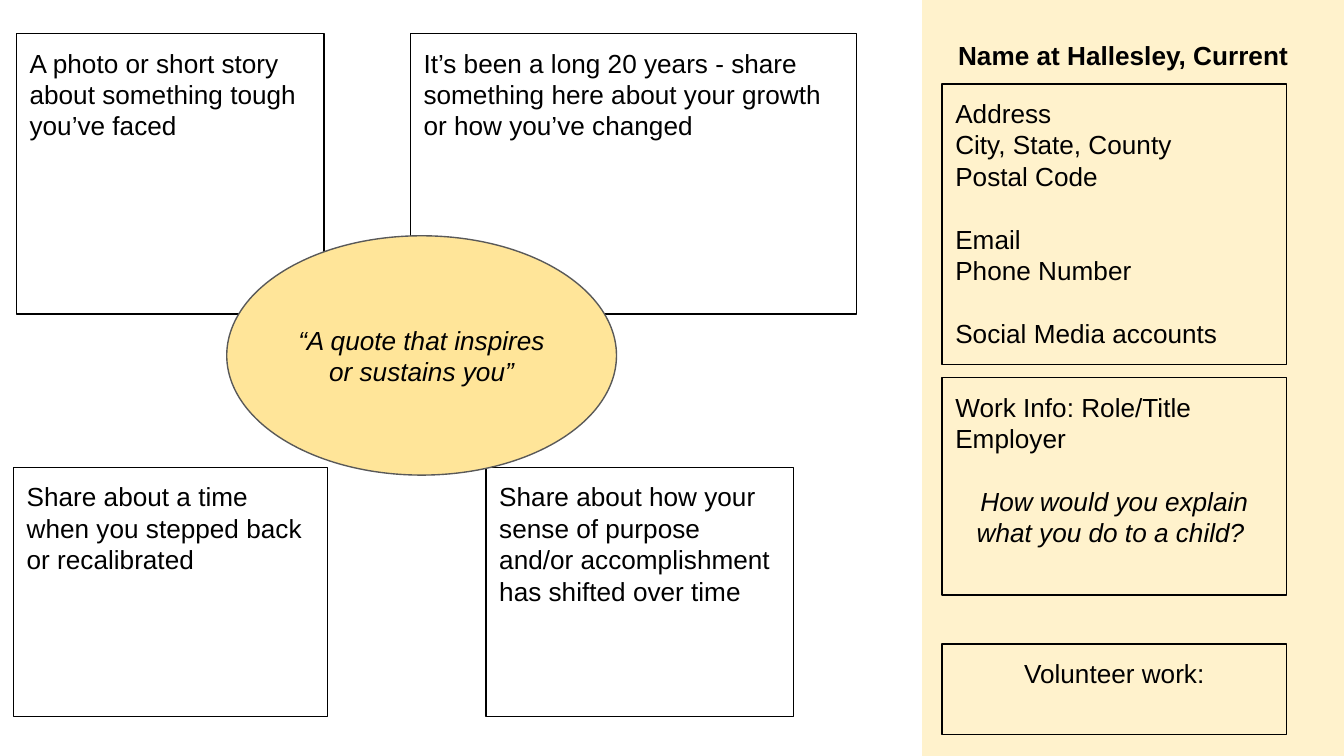
from pptx import Presentation
from pptx.dml.color import RGBColor
from pptx.enum.shapes import MSO_SHAPE
from pptx.enum.text import MSO_ANCHOR, PP_ALIGN
from pptx.util import Pt

RECTANGLE, OVAL = MSO_SHAPE.RECTANGLE, MSO_SHAPE.OVAL
TOP, MIDDLE = MSO_ANCHOR.TOP, MSO_ANCHOR.MIDDLE
LEFT, CENTER = PP_ALIGN.LEFT, PP_ALIGN.CENTER

COLORS = {
    "ink": "000000",
    "sidebar": "FFF2CC",
    "quote": "FFE599",
    "quote_edge": "595959",
}


class ProfileSlide:
    font = "Arial"
    size = 14
    line_width = 0.75
    inset = 7.2
    blank_line = 16.8

    def __init__(self, slide):
        self.slide = slide

    def color(self, name):
        return RGBColor.from_string(COLORS[name])

    def shape(self, kind, box, fill=None, line=None):
        shape = self.slide.shapes.add_shape(kind, *map(Pt, box))
        shape.shadow.inherit = False
        if fill:
            shape.fill.solid()
            shape.fill.fore_color.rgb = self.color(fill)
        else:
            shape.fill.background()
        if line:
            shape.line.color.rgb = self.color(line)
            shape.line.width = Pt(self.line_width)
        else:
            shape.line.fill.background()
        return shape

    def set_text(self, shape, text, align=LEFT, anchor=TOP, bold=False, italic=False):
        frame = shape.text_frame
        frame.word_wrap = True
        frame.vertical_anchor = anchor
        frame.margin_left = frame.margin_right = Pt(self.inset)
        frame.margin_top = frame.margin_bottom = Pt(self.inset)
        frame.text = text
        for paragraph in frame.paragraphs:
            paragraph.alignment = align
            for run in paragraph.runs:
                run.font.name = self.font
                run.font.size = Pt(self.size)
                run.font.bold = bold
                run.font.italic = italic
                run.font.color.rgb = self.color("ink")
        return frame.paragraphs

    def heading(self, box, text):
        self.set_text(self.slide.shapes.add_textbox(*map(Pt, box)), text, bold=True)

    def card(self, box, text, align=LEFT, gaps=()):
        """Outlined box; gaps lists the paragraphs set one line lower."""
        paragraphs = self.set_text(self.shape(RECTANGLE, box, line="ink"), text, align)
        for index in gaps:
            paragraphs[index].space_before = Pt(self.blank_line)
        return paragraphs

    def quote(self, box, text):
        oval = self.shape(OVAL, box, fill="quote", line="quote_edge")
        self.set_text(oval, text, CENTER, MIDDLE, italic=True)


def main():
    deck = Presentation()
    deck.slide_width, deck.slide_height = Pt(720), Pt(405)
    page = ProfileSlide(deck.slides.add_slide(deck.slide_layouts[6]))

    page.shape(RECTANGLE, (494, -0.5, 226, 406), fill="sidebar")
    page.heading((506.2, 13.7, 201.6, 31.7), "Name at Hallesley, Current")

    side_left, side_width = 504.7, 184.6
    page.card(
        (side_left, 45, side_width, 150.3),
        "Address\nCity, State, County\nPostal Code\nEmail\nPhone Number\n"
        "Social Media accounts",
        gaps=(3, 5),
    )
    work = page.card(
        (side_left, 202.4, side_width, 116.4),
        "Work Info: Role/Title\nEmployer\n"
        "How would you explain what you do to a child? ",
        gaps=(2,),
    )
    work[2].alignment = CENTER
    work[2].runs[0].font.italic = True
    page.card((side_left, 345, side_width, 48.4), "Volunteer work:", CENTER)

    upper, lower = (18, 150.3), (250.4, 133.4)
    prompts = [
        (219.8, 239, upper, "It’s been a long 20 years - share something here "
                            "about your growth or how you’ve changed"),
        (7.2, 168.4, lower, "Share about a time when you stepped back or recalibrated"),
        (260.4, 164.8, lower, "Share about how your sense of purpose and/or "
                              "accomplishment has shifted over time"),
        (8.8, 164.8, upper, "A photo or short story about something tough you’ve faced"),
    ]
    for left, width, (top, height), prompt in prompts:
        page.card((left, top, width, height), prompt)

    page.quote((121.5, 126.3, 208.8, 128.2), "“A quote that inspires or sustains you”")
    deck.save("out.pptx")


if __name__ == "__main__":
    main()
